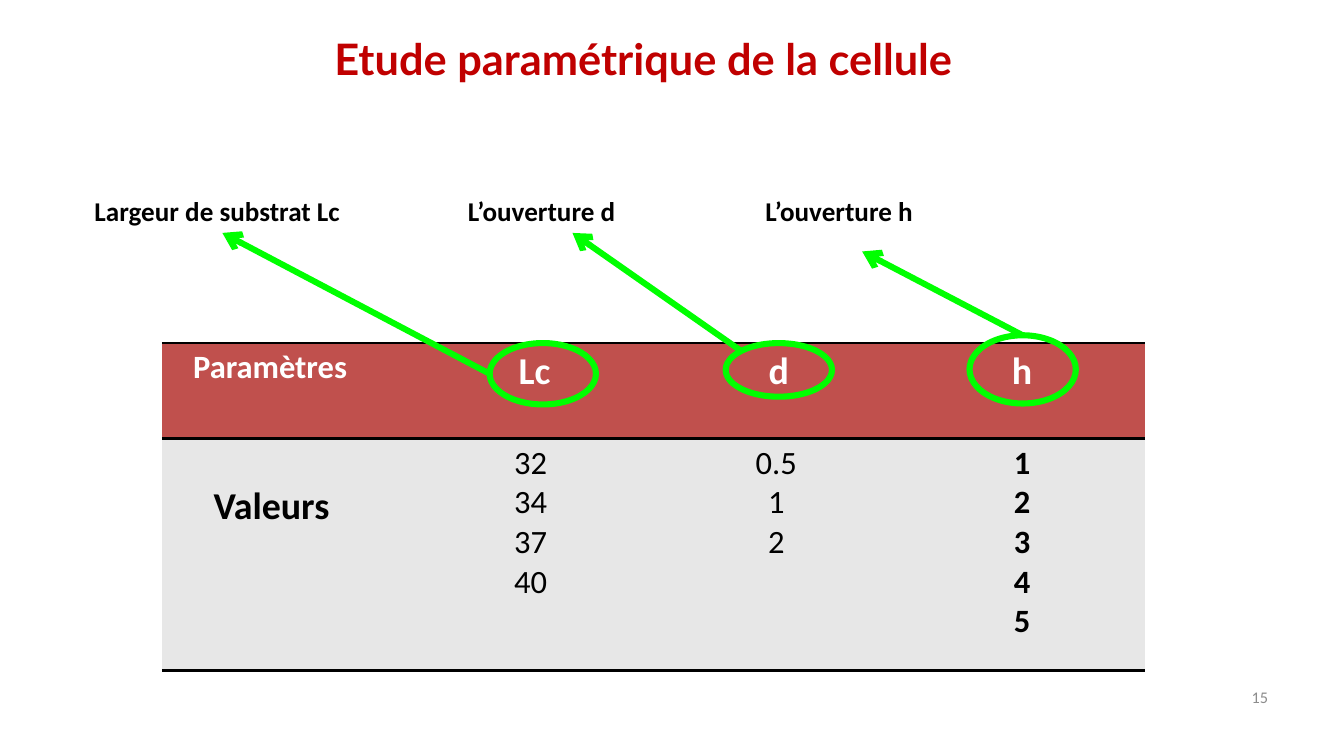
from lxml import etree
from pptx import Presentation
from pptx.dml.color import RGBColor
from pptx.enum.shapes import MSO_CONNECTOR, MSO_SHAPE
from pptx.enum.text import MSO_ANCHOR, PP_ALIGN
from pptx.oxml.ns import qn
from pptx.util import Inches, Pt

LEFT, CENTER, RIGHT = PP_ALIGN.LEFT, PP_ALIGN.CENTER, PP_ALIGN.RIGHT
BLACK, WHITE, GREEN, RED = "000000", "FFFFFF", "00FF00", "C00000"
HEADER_FILL, VALUES_FILL, GREY = "C0504D", "E7E7E7", "8C8C8C"
NO_STYLE_NO_GRID = "{2D5ABB26-0587-4C30-8999-92F81FD0307C}"

TITLE = "Etude paramétrique de la cellule"
PAGE_NUMBER = "15"

# text, size, bold, align, extra left margin, extra top margin
HEADER = [
    ("Paramètres", 24, True, LEFT, 0.22, 0),
    ("Lc", 28, True, CENTER, 0.08, 0),
    ("d", 28, True, CENTER, 0.05, 0),
    ("h", 28, True, CENTER, 0, 0),
]
VALUES = [
    ("Valeurs", 28, True, LEFT, 0.43, 0.41),
    ("32\n34\n37\n40", 24, False, CENTER, 0, 0),
    ("0.5\n1\n2", 24, False, CENTER, 0, 0),
    ("1\n2\n3\n4\n5", 24, True, CENTER, 0, 0),
]
TABLE_LEFT, TABLE_TOP = 1.66, 3.52
COLUMN_WIDTH, ROW_HEIGHTS = 2.52, (0.98, 2.38)

# label, label left, label width, ring box, ring site, arrow tip
CALLOUTS = [
    ("Largeur de substrat Lc", 0.87, 2.81, (5.02, 3.52, 1.09, 0.63), 2, (2.28, 2.39)),
    ("L’ouverture d", 4.7, 2.34, (7.44, 3.52, 1.09, 0.55), 1, (5.87, 2.39)),
    ("L’ouverture h", 7.75, 2.19, (9.94, 3.44, 1.09, 0.7), 0, (8.84, 2.58)),
]
# ellipse connection site: share of width and height
RING_SITES = {0: (0.5, 0), 1: (0.146, 0.146), 2: (0, 0.5)}


def rgb(color):
    return RGBColor.from_string(color)


def format_text(frame, size, color, bold=False, align=LEFT, font="Calibri"):
    for paragraph in frame.paragraphs:
        paragraph.alignment = align
        for run in paragraph.runs:
            run.font.size, run.font.name, run.font.bold = Pt(size), font, bold
            run.font.color.rgb = rgb(color)


def add_label(slide, text, box, **style):
    frame = slide.shapes.add_textbox(*map(Inches, box)).text_frame
    frame.word_wrap = True
    frame.text = text
    format_text(frame, **style)
    return frame


def add_cell_border(cell, side):
    border = etree.SubElement(cell._tc.get_or_add_tcPr(), qn(f"a:{side}"), w=str(Pt(2)))
    fill = etree.SubElement(border, qn("a:solidFill"))
    etree.SubElement(fill, qn("a:srgbClr"), val=BLACK)


def fill_row(table, row, entries, fill, color):
    for column, (text, size, bold, align, left, top) in enumerate(entries):
        cell = table.cell(row, column)
        if row == 0:
            add_cell_border(cell, "lnT")
        add_cell_border(cell, "lnB")
        cell.fill.solid()
        cell.fill.fore_color.rgb = rgb(fill)
        cell.margin_left, cell.margin_top = Inches(0.1 + left), Inches(0.05 + top)
        cell.text_frame.text = text
        format_text(cell.text_frame, size, color, bold, align)


def add_parameter_table(slide):
    frame = slide.shapes.add_table(
        len(ROW_HEIGHTS), len(HEADER), Inches(TABLE_LEFT), Inches(TABLE_TOP),
        Inches(COLUMN_WIDTH * len(HEADER)), Inches(sum(ROW_HEIGHTS)))
    table = frame.table
    table._tbl.tblPr.find(qn("a:tableStyleId")).text = NO_STYLE_NO_GRID
    for column in table.columns:
        column.width = Inches(COLUMN_WIDTH)
    for row, height in zip(table.rows, ROW_HEIGHTS):
        row.height = Inches(height)
    fill_row(table, 0, HEADER, HEADER_FILL, WHITE)
    fill_row(table, 1, VALUES, VALUES_FILL, BLACK)


def add_ring(slide, box):
    ring = slide.shapes.add_shape(MSO_SHAPE.OVAL, *map(Inches, box))
    ring.shadow.inherit = False
    ring.fill.background()
    ring.line.color.rgb, ring.line.width = rgb(GREEN), Pt(4.5)
    return ring


def add_arrow(slide, ring, site, tip):
    across, down = RING_SITES[site]
    start_x = int(ring.left + across * ring.width)
    start_y = int(ring.top + down * ring.height)
    arrow = slide.shapes.add_connector(
        MSO_CONNECTOR.STRAIGHT, start_x, start_y, *map(Inches, tip))
    arrow.begin_connect(ring, site)
    # An ellipse has eight sites, so the start is placed on its own outline
    arrow.begin_x, arrow.begin_y = start_x, start_y
    arrow.line.color.rgb, arrow.line.width = rgb(GREEN), Pt(4.5)
    etree.SubElement(arrow.line._get_or_add_ln(), qn("a:tailEnd"), type="arrow")
    etree.SubElement(arrow._element.spPr, qn("a:effectLst"))


def main():
    deck = Presentation()
    deck.slide_width, deck.slide_height = Inches(13.78), Inches(7.5)
    slide = deck.slides.add_slide(deck.slide_layouts[5])

    title = slide.shapes.title
    title.left, title.top = Inches(1.73), Inches(0)
    title.width, title.height = Inches(9.01), Inches(1.08)
    frame = title.text_frame
    frame.text = TITLE
    frame.vertical_anchor = MSO_ANCHOR.MIDDLE
    frame.margin_left, frame.margin_top = Inches(0.83), Inches(0.16)
    format_text(frame, 32, RED, True, CENTER, "Lato")

    number = add_label(slide, PAGE_NUMBER, (9.88, 6.95, 3.22, 0.4),
                       size=12, color=GREY, align=RIGHT)
    number.vertical_anchor = MSO_ANCHOR.MIDDLE

    add_parameter_table(slide)
    for label, left, width, ring_box, site, tip in CALLOUTS:
        ring = add_ring(slide, ring_box)
        add_arrow(slide, ring, site, tip)
        add_label(slide, label, (left, 1.95, width, 0.44), size=20, color=BLACK, bold=True)

    deck.save("out.pptx")


if __name__ == "__main__":
    main()
